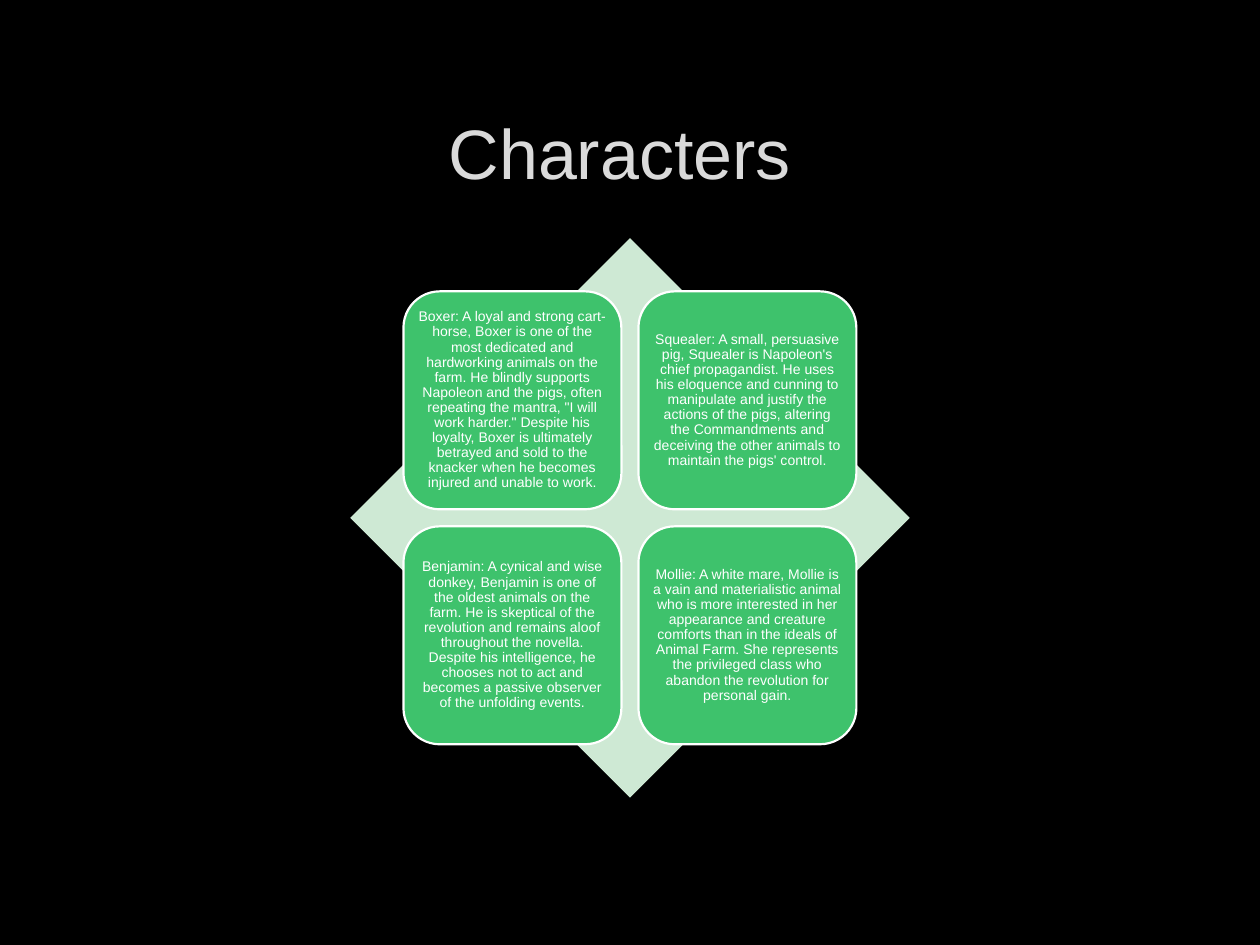
import pptx
import pptx.dml.color
import pptx.enum.shapes
import pptx.enum.text
import pptx.util

SLIDE_WIDTH, SLIDE_HEIGHT = 10, 7.5
FONT = "Arial"

# Diamond square, and the two-by-two grid of cards centred on it
DIAMOND_LEFT, DIAMOND_TOP, DIAMOND_SIZE = 2.78, 1.89, 4.44
CARD_SIZE, CARD_PITCH = 1.73, 1.865
GRID_INSET = (DIAMOND_SIZE - CARD_SIZE - CARD_PITCH) / 2
COLUMNS = 2

CHARACTERS = [
    "Boxer: A loyal and strong cart-horse, Boxer is one of the most dedicated "
    "and hardworking animals on the farm. He blindly supports Napoleon and the "
    "pigs, often repeating the mantra, \"I will work harder.\" Despite his "
    "loyalty, Boxer is ultimately betrayed and sold to the knacker when he "
    "becomes injured and unable to work.",
    "Squealer: A small, persuasive pig, Squealer is Napoleon's chief "
    "propagandist. He uses his eloquence and cunning to manipulate and justify "
    "the actions of the pigs, altering the Commandments and deceiving the other "
    "animals to maintain the pigs' control.",
    "Benjamin: A cynical and wise donkey, Benjamin is one of the oldest animals "
    "on the farm. He is skeptical of the revolution and remains aloof throughout "
    "the novella. Despite his intelligence, he chooses not to act and becomes a "
    "passive observer of the unfolding events.",
    "Mollie: A white mare, Mollie is a vain and materialistic animal who is more "
    "interested in her appearance and creature comforts than in the ideals of "
    "Animal Farm. She represents the privileged class who abandon the revolution "
    "for personal gain.",
]


def color(hex_string):
    return pptx.dml.color.RGBColor.from_string(hex_string)


def write_text(shape, text, size, hex_string):
    """Write one centred paragraph in the middle of a shape."""
    frame = shape.text_frame
    frame.word_wrap = True
    frame.auto_size = pptx.enum.text.MSO_AUTO_SIZE.NONE
    frame.vertical_anchor = pptx.enum.text.MSO_ANCHOR.MIDDLE
    paragraph = frame.paragraphs[0]
    paragraph.alignment = pptx.enum.text.PP_ALIGN.CENTER
    run = paragraph.add_run()
    run.text = text
    run.font.name = FONT
    run.font.size = pptx.util.Pt(size)
    run.font.color.rgb = color(hex_string)
    return paragraph


def add_title(slide, text):
    title = slide.shapes.title
    title.left, title.top = pptx.util.Inches(0.75), pptx.util.Inches(0.67)
    title.width, title.height = pptx.util.Inches(8.49), pptx.util.Inches(1.06)
    write_text(title, text, 40, "DADADA")


def add_square(slide, kind, left, top, size, fill):
    """Add a preset shape of equal width and height, without a line."""
    shape = slide.shapes.add_shape(
        kind, *(pptx.util.Inches(length) for length in (left, top, size, size)))
    shape.shadow.inherit = False
    shape.fill.solid()
    shape.fill.fore_color.rgb = color(fill)
    shape.line.fill.background()
    return shape


def add_card(slide, column, row, text):
    card = add_square(
        slide, pptx.enum.shapes.MSO_SHAPE.ROUNDED_RECTANGLE,
        DIAMOND_LEFT + GRID_INSET + column * CARD_PITCH,
        DIAMOND_TOP + GRID_INSET + row * CARD_PITCH,
        CARD_SIZE, "3EC26C")
    card.line.color.rgb = color("FFFFFF")
    card.line.width = pptx.util.Pt(1.25)
    frame = card.text_frame
    frame.margin_left = frame.margin_right = pptx.util.Inches(0.03)
    frame.margin_top = frame.margin_bottom = pptx.util.Inches(0.03)
    paragraph = write_text(card, text, 8, "FFFFFF")
    paragraph.line_spacing = 0.9


def main():
    presentation = pptx.Presentation()
    presentation.slide_width = pptx.util.Inches(SLIDE_WIDTH)
    presentation.slide_height = pptx.util.Inches(SLIDE_HEIGHT)

    # Title Only layout on a black background
    slide = presentation.slides.add_slide(presentation.slide_layouts[5])
    slide.background.fill.solid()
    slide.background.fill.fore_color.rgb = color("000000")
    add_title(slide, "Characters ")

    # Diamond behind the four character cards
    add_square(slide, pptx.enum.shapes.MSO_SHAPE.DIAMOND,
               DIAMOND_LEFT, DIAMOND_TOP, DIAMOND_SIZE, "CEE9D4")
    for index, text in enumerate(CHARACTERS):
        row, column = divmod(index, COLUMNS)
        add_card(slide, column, row, text)

    presentation.save("out.pptx")


if __name__ == "__main__":
    main()
